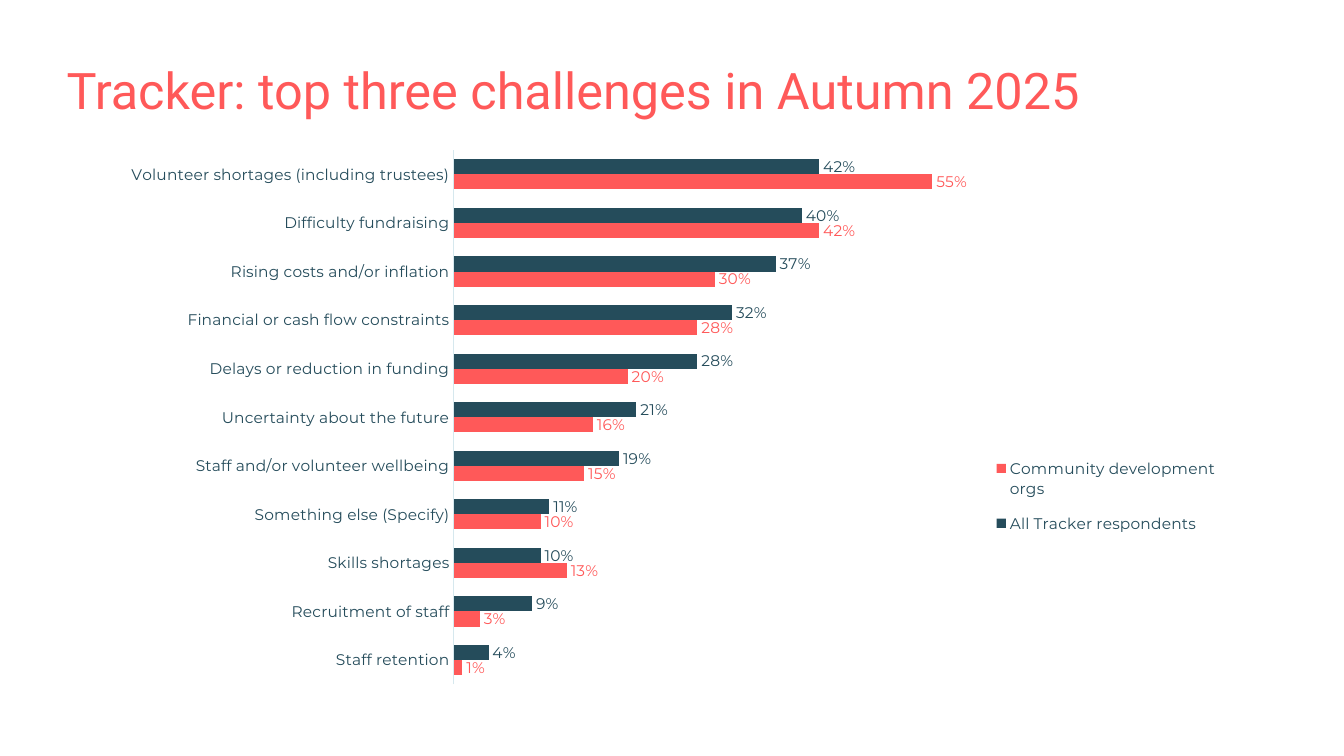
"""Build the slide comparing the top three challenges in Autumn 2025."""
from dataclasses import dataclass

from pptx import Presentation
from pptx import util as u
from pptx.chart.axis import CategoryAxis
from pptx.chart.chart import Chart
from pptx.chart.data import CategoryChartData
from pptx.chart.series import BarSeries
from pptx.dml.color import RGBColor
from pptx.enum import chart as ch, text
from pptx.oxml import parse_xml
from pptx.oxml.ns import nsdecls, qn
from pptx.slide import Slide
from pptx.text.text import Font


@dataclass(frozen=True)
class Theme:
    coral: str = "FF5959"
    teal: str = "254C5B"
    axis: str = "D6E8EE"
    title_font: str = "Roboto"
    chart_font: str = "Montserrat"
    title_size: int = 36
    chart_size: int = 11


@dataclass(frozen=True)
class Box:
    x: float
    y: float
    w: float
    h: float

    def inches(self) -> tuple[u.Length, ...]:
        return tuple(u.Inches(v) for v in (self.x, self.y, self.w, self.h))


@dataclass(frozen=True)
class Group:
    name: str
    color: str
    percents: tuple[int, ...]


THEME = Theme()
TITLE_BOX = Box(0.56, 0.6, 12.22, 0.64)
CHART_BOX = Box(1.08, 1.38, 11.17, 5.51)
PLOT_BOX = Box(4.5, 1.49, 5.18, 5.3)
LEGEND_BOX = Box(9.78, 4.4, 2.38, 1.04)
CHALLENGES = (
    "Volunteer shortages (including trustees)",
    "Difficulty fundraising",
    "Rising costs and/or inflation",
    "Financial or cash flow constraints",
    "Delays or reduction in funding",
    "Uncertainty about the future",
    "Staff and/or volunteer wellbeing",
    "Something else (Specify)",
    "Skills shortages",
    "Recruitment of staff",
    "Staff retention",
)
GROUPS = (
    Group("All Tracker respondents", THEME.teal,
          (42, 40, 37, 32, 28, 21, 19, 11, 10, 9, 4)),
    Group("Community development orgs", THEME.coral,
          (55, 42, 30, 28, 20, 16, 15, 10, 13, 3, 1)),
)


def style_font(font: Font, name: str, size: int, color: str) -> None:
    font.name = name
    font.size = u.Pt(size)
    font.bold = False
    font.color.rgb = RGBColor.from_string(color)


def add_title(s: Slide, title: str) -> None:
    sp = s.shapes.title
    sp.left, sp.top, sp.width, sp.height = TITLE_BOX.inches()
    tf = sp.text_frame
    tf.text = title
    tf.word_wrap = True
    tf.auto_size = text.MSO_AUTO_SIZE.NONE
    tf.vertical_anchor = text.MSO_ANCHOR.MIDDLE
    p = tf.paragraphs[0]
    p.alignment = text.PP_ALIGN.LEFT
    p.line_spacing = 0.9
    style_font(p.runs[0].font, THEME.title_font, THEME.title_size, THEME.coral)


def place(chart: Chart, tag: str, index: int, box: Box, target: str = "") -> None:
    parent = chart.element.xpath(f".//{tag}")[0]
    for old in parent.findall(qn("c:layout")):
        parent.remove(old)
    fractions = {
        "x": (box.x - CHART_BOX.x) / CHART_BOX.w,
        "y": (box.y - CHART_BOX.y) / CHART_BOX.h,
        "w": box.w / CHART_BOX.w,
        "h": box.h / CHART_BOX.h,
    }
    modes = '<c:xMode val="edge"/><c:yMode val="edge"/>'
    sizes = "".join(f'<c:{k} val="{v:.4f}"/>' for k, v in fractions.items())
    parent.insert(index, parse_xml(
        f'<c:layout {nsdecls("c")}><c:manualLayout>{target}{modes}{sizes}'
        "</c:manualLayout></c:layout>"))


def style_series(series: BarSeries, color: str) -> None:
    series.format.fill.solid()
    series.format.fill.fore_color.rgb = RGBColor.from_string(color)
    series.invert_if_negative = False
    labels = series.data_labels
    labels.show_value = True
    labels.number_format = "0%"
    labels.number_format_is_linked = False
    labels.position = ch.XL_LABEL_POSITION.OUTSIDE_END
    style_font(labels.font, THEME.chart_font, THEME.chart_size, color)


def style_categories(axis: CategoryAxis) -> None:
    axis.reverse_order = True
    axis.has_major_gridlines = False
    axis.major_tick_mark = axis.minor_tick_mark = ch.XL_TICK_MARK.NONE
    axis.format.line.color.rgb = RGBColor.from_string(THEME.axis)
    axis.format.line.width = u.Pt(0.75)
    style_font(axis.tick_labels.font, THEME.chart_font, THEME.chart_size, THEME.teal)


def add_challenges(s: Slide) -> None:
    data = CategoryChartData(number_format="0%")
    data.categories = CHALLENGES
    for group in GROUPS:
        data.add_series(group.name, [v / 100 for v in group.percents])
    chart = s.shapes.add_chart(
        ch.XL_CHART_TYPE.BAR_CLUSTERED, *CHART_BOX.inches(), data).chart
    chart.has_title = False
    style_font(chart.font, THEME.chart_font, THEME.chart_size, THEME.teal)
    plot = chart.plots[0]
    plot.gap_width = 122
    plot.overlap = 0
    plot.vary_by_categories = False
    for series, group in zip(plot.series, GROUPS):
        style_series(series, group.color)
    style_categories(chart.category_axis)
    axis = chart.value_axis
    axis.visible = False
    axis.has_major_gridlines = False
    axis.minimum_scale, axis.maximum_scale = 0, 0.6
    chart.has_legend = True
    chart.legend.position = ch.XL_LEGEND_POSITION.RIGHT
    chart.legend.include_in_layout = False
    style_font(chart.legend.font, THEME.chart_font, THEME.chart_size, THEME.teal)
    place(chart, "c:plotArea", 0, PLOT_BOX, '<c:layoutTarget val="inner"/>')
    place(chart, "c:legend", 1, LEGEND_BOX)


def main() -> None:
    prs = Presentation()
    prs.slide_width, prs.slide_height = u.Inches(13.33), u.Inches(7.5)
    s = prs.slides.add_slide(prs.slide_layouts[5])
    add_title(s, "Tracker: top three challenges in Autumn 2025")
    add_challenges(s)
    prs.save("out.pptx")


if __name__ == "__main__":
    main()
